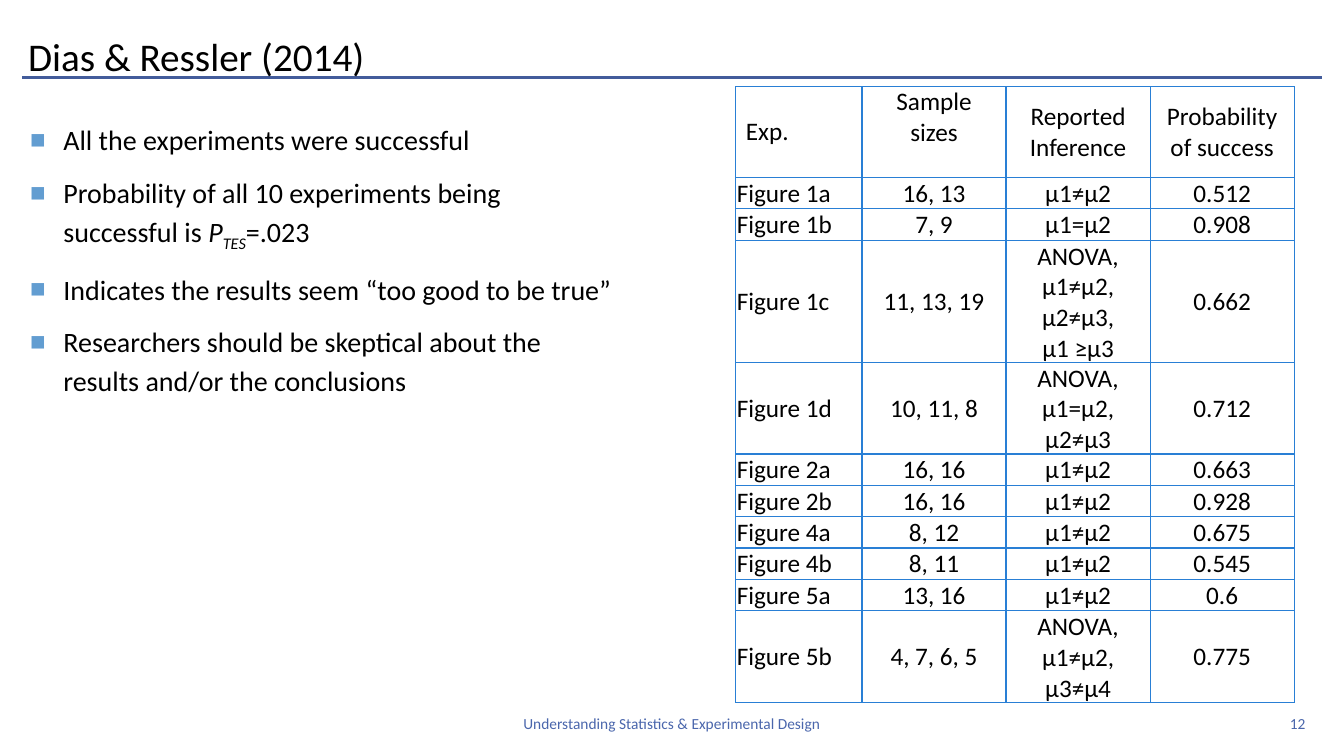
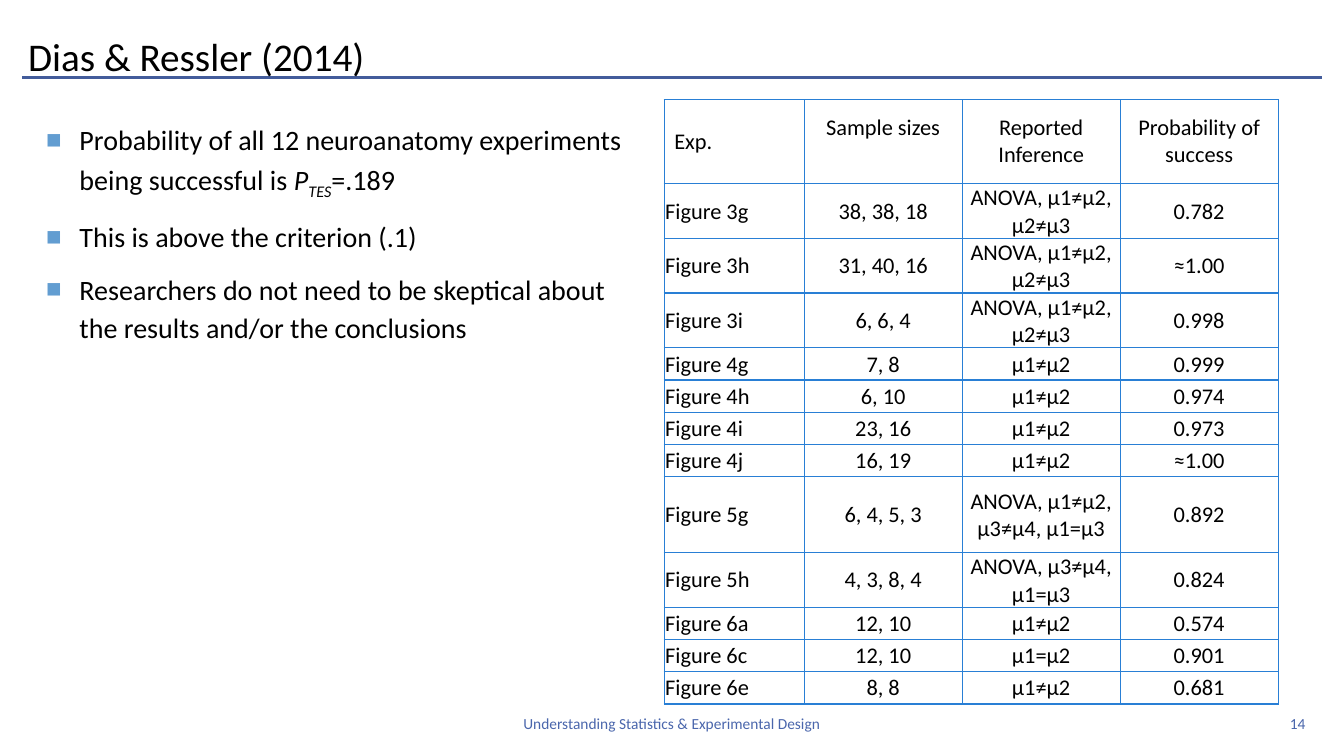
from dataclasses import dataclass
from typing import NamedTuple

from lxml import etree
from pptx import Presentation
from pptx.dml.color import RGBColor
from pptx.enum.shapes import MSO_CONNECTOR, MSO_SHAPE
from pptx.enum.text import MSO_ANCHOR, PP_ALIGN
from pptx.oxml.ns import qn
from pptx.util import Inches, Pt

LEFT, MID, RIGHT = PP_ALIGN.LEFT, PP_ALIGN.CENTER, PP_ALIGN.RIGHT
TOP, CENTER, BOTTOM = MSO_ANCHOR.TOP, MSO_ANCHOR.MIDDLE, MSO_ANCHOR.BOTTOM
LINE, RECT = MSO_CONNECTOR.STRAIGHT, MSO_SHAPE.RECTANGLE
WIDTH, HEIGHT = Inches(13.33), Inches(7.5)
FONT, BLACK, WHITE = "Calibri", "000000", "FFFFFF"
BLUE, RULE, BULLET, GRID = "4A66AC", "435C9B", "629DD1", "297FD5"
HEADS = ("Exp.", "Sample sizes", "Reported Inference", "Probability of success")
STYLES = ((False, 0), (True, 0), (True, -25), (False, 0))
PAIR = "μ1≠μ2"
TRIO = "ANOVA, μ1≠μ2, μ2≠μ3"


class Box(NamedTuple):
    """Place of an item in percent of the slide."""
    left: float
    top: float
    width: float
    height: float


class Row(NamedTuple):
    """Table row, with its height in percent of the slide."""
    name: str
    sizes: str
    claim: str
    prob: str
    height: float


@dataclass
class Page:
    """Content of one slide."""
    number: int
    body: Box
    points: list[str]
    grid: Box
    size: int
    first: float
    head: float
    rows: list[Row]


TITLE = Box(1.35, 2.53, 90.45, 8.67)
FOOTER = Box(24.45, 93.07, 51.08, 5.33)
NUMBER = Box(87.53, 93.07, 10.35, 5.33)
LOW, TALL = 4.15, 12
ONE, TWO = 4.27, 6.67

PAGES = [
    Page(
        12, Box(1.5, 14.93, 45.08, 77.87),
        ["All the experiments were successful",
         "Probability of all 10 experiments being successful is |P|TES|=.023",
         "Indicates the results seem “too good to be true”",
         "Researchers should be skeptical about the results and/or the conclusions"],
        Box(54.75, 11.47, 41.55, 81.73), 18, 0.226, 11.87,
        [Row("Figure 1a", "16, 13", PAIR, "0.512", LOW),
         Row("Figure 1b", "7, 9", "μ1=μ2", "0.908", LOW),
         Row("Figure 1c", "11, 13, 19", f"{TRIO},\nμ1 ≥μ3", "0.662", 16),
         Row("Figure 1d", "10, 11, 8", "ANOVA, μ1=μ2, μ2≠μ3", "0.712", TALL),
         Row("Figure 2a", "16, 16", PAIR, "0.663", LOW),
         Row("Figure 2b", "16, 16", PAIR, "0.928", LOW),
         Row("Figure 4a", "8, 12", PAIR, "0.675", LOW),
         Row("Figure 4b", "8, 11", PAIR, "0.545", LOW),
         Row("Figure 5a", "13, 16", PAIR, "0.6", LOW),
         Row("Figure 5b", "4, 7, 6, 5", "ANOVA, μ1≠μ2, μ3≠μ4", "0.775", TALL)]),
    Page(
        14, Box(2.7, 14.93, 45.6, 77.87),
        ["Probability of all 12 neuroanatomy experiments being successful is |P|TES|=.189",
         "This is above the criterion (.1)",
         "Researchers do not need to be skeptical about the results and/or the conclusions"],
        Box(49.42, 13.2, 45.68, 80.13), 16, 0.228, 11.07,
        [Row("Figure 3g", "38, 38, 18", TRIO, "0.782", TWO),
         Row("Figure 3h", "31, 40, 16", TRIO, "≈1.00", TWO),
         Row("Figure 3i", "6, 6, 4", TRIO, "0.998", TWO),
         Row("Figure 4g", "7, 8", PAIR, "0.999", ONE),
         Row("Figure 4h", "6, 10", PAIR, "0.974", ONE),
         Row("Figure 4i", "23, 16", PAIR, "0.973", ONE),
         Row("Figure 4j", "16, 19", PAIR, "≈1.00", ONE),
         Row("Figure 5g", "6, 4, 5, 3", "ANOVA, μ1≠μ2, μ3≠μ4, μ1=μ3", "0.892", 10),
         Row("Figure 5h", "4, 3, 8, 4", "ANOVA, μ3≠μ4, μ1=μ3", "0.824", TWO),
         Row("Figure 6a", "12, 10", PAIR, "0.574", ONE),
         Row("Figure 6c", "12, 10", "μ1=μ2", "0.901", ONE),
         Row("Figure 6e", "8, 8", PAIR, "0.681", ONE)]),
]


def across(share: float) -> int:
    """Turn a percent of the slide width into a length."""
    return round(WIDTH * share / 100)


def down(share: float) -> int:
    """Turn a percent of the slide height into a length."""
    return round(HEIGHT * share / 100)


def place(box: Box) -> tuple[int, int, int, int]:
    """Turn a box into lengths."""
    return across(box.left), down(box.top), across(box.width), down(box.height)


def paint(color: str) -> RGBColor:
    """Read a hex colour."""
    return RGBColor.from_string(color)


def child(parent, tag: str, **values: str):
    """Append a drawing element to its parent."""
    return etree.SubElement(parent, qn(f"a:{tag}"), **values)


def dot(para) -> None:
    """Give a paragraph a square bullet and a hanging indent."""
    props = para._p.get_or_add_pPr()
    indent = Inches(0.33)
    props.set("marL", str(indent))
    props.set("indent", str(-indent))
    child(child(props, "buClr"), "srgbClr", val=BULLET)
    child(props, "buSzPct", val="92000")
    child(props, "buFont", typeface="Arial")
    child(props, "buChar", char="■")


def write(frame, text: str, *, size: int, color: str = BLACK, align=LEFT,
          anchor=CENTER, bullet: bool = False) -> None:
    """Fill a frame, one paragraph a line, with bars between run styles."""
    frame.word_wrap = True
    frame.vertical_anchor = anchor
    for index, line in enumerate(text.split("\n")):
        para = frame.add_paragraph() if index else frame.paragraphs[0]
        para.alignment = align
        if bullet:
            dot(para)
            para.line_spacing = 1.15
            para.space_before = Pt(4 if index else 0)
            para.space_after = Pt(6)
        for part, (slant, shift) in zip(line.split("|"), STYLES):
            run = para.add_run()
            run.text = part
            font = run.font
            font.name, font.size, font.italic = FONT, Pt(size), slant
            font.color.rgb = paint(color)
            if shift:
                run._r.get_or_add_rPr().set("baseline", str(shift * 1000))


def label(slide, box: Box, text: str, **style) -> None:
    """Add a text box."""
    write(slide.shapes.add_textbox(*place(box)).text_frame, text, **style)


def frame(slide, number: int) -> None:
    """Draw the number, footer, rule and title that slides share."""
    plate = slide.shapes.add_shape(RECT, *place(NUMBER))
    plate.shadow.inherit = False
    plate.fill.solid()
    plate.fill.fore_color.rgb = paint(WHITE)
    plate.line.fill.background()
    write(plate.text_frame, str(number), size=11, color=BLUE, align=RIGHT)
    label(slide, FOOTER, "Understanding Statistics & Experimental Design",
          size=11, color=BLUE, align=MID)
    level = down(10.27)
    rule = slide.shapes.add_connector(LINE, across(1.65), level, across(98.35), level)
    rule.line.color.rgb = paint(RULE)
    rule.line.width = Pt(2.25)
    child(rule._element.spPr, "effectLst")
    label(slide, TITLE, "Dias & Ressler (2014)", size=28, anchor=BOTTOM)


def edge(cell) -> None:
    """Draw the four borders of a cell."""
    props = cell._tc.get_or_add_tcPr()
    for index, side in enumerate("LRTB"):
        line = etree.Element(qn(f"a:ln{side}"), w=str(Pt(1)))
        child(child(line, "solidFill"), "srgbClr", val=GRID)
        props.insert(index, line)


def pad(cell, *sides: float) -> None:
    """Set the left, top, right and bottom margins of a cell."""
    (cell.margin_left, cell.margin_top,
     cell.margin_right, cell.margin_bottom) = map(Inches, sides)


def chart(slide, page: Page) -> None:
    """Draw the table of experiments."""
    rows = [Row(*HEADS, page.head), *page.rows]
    table = slide.shapes.add_table(len(rows), len(HEADS), *place(page.grid)).table
    table.first_row = table.horz_banding = False
    rest = (1 - page.first) / (len(HEADS) - 1)
    for index, column in enumerate(table.columns):
        column.width = across(page.grid.width * (rest if index else page.first))
    for top, row in enumerate(rows):
        table.rows[top].height = down(row.height)
        for left, text in enumerate(row[:len(HEADS)]):
            cell = table.cell(top, left)
            cell.fill.background()
            edge(cell)
            if top:
                pad(cell, 0.01, 0.01, 0.01, 0)
            elif left:
                pad(cell, 0.08, 0, 0.08, page.size / 60 if left == 1 else 0)
            else:
                pad(cell, 0.1, 0.05, 0.1, 0.05)
            write(cell.text_frame, text, size=page.size, align=MID if left else LEFT)
            cell.vertical_anchor = CENTER


def main() -> None:
    """Build and save the slides."""
    deck = Presentation()
    deck.slide_width, deck.slide_height = WIDTH, HEIGHT
    for page in PAGES:
        slide = deck.slides.add_slide(deck.slide_layouts[6])
        frame(slide, page.number)
        label(slide, page.body, "\n".join(page.points), size=20, anchor=TOP, bullet=True)
        chart(slide, page)
    deck.save("out.pptx")


if __name__ == "__main__":
    main()
